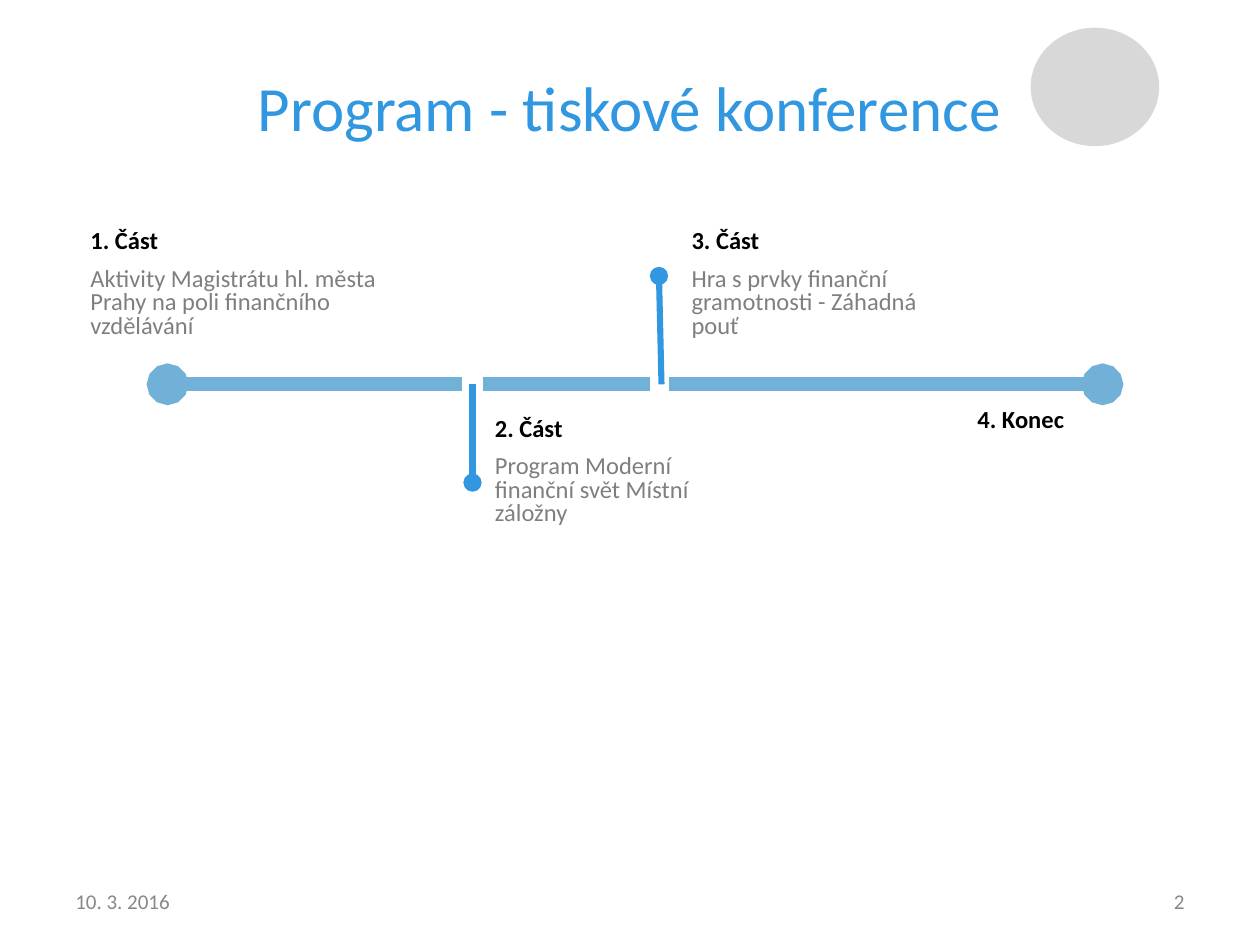
"""Build the press conference programme slide with a four-part timeline."""
from lxml import etree
from pptx import Presentation
from pptx import util as u
from pptx.dml.color import RGBColor
from pptx.enum import shapes, text
from pptx.oxml.ns import qn

HUES = {"blue": "3197E0", "sky": "72B1D7", "black": "000000",
        "gray": "7F7F7F", "pale": "888888", "disc": "D8D8D8"}
FONT = "Calibri"
WIDE, HIGH = 10, 7.5
AXIS = 3.05
TITLE = "Program - tiskové konference"
PARTS = [
    ("1. Část", "Aktivity Magistrátu hl. města Prahy na poli finančního vzdělávání",
     (0.62, 1.78, 2.5)),
    ("2. Část", "Program Moderní finanční svět Místní záložny", (3.83, 3.27, 1.84)),
    ("3. Část", "Hra s prvky finanční gramotnosti - Záhadná pouť", (5.39, 1.78, 2.19)),
    ("4. Konec", "", (7.66, 3.2, 1.94)),
]
BARS = [(1.33, 3.67, True), (8.75, 6.56, True), (3.83, 5.16, False), (5.31, 6.64, False)]
STEMS = [(3.75, 3.83, 3.75), (5.23, 2.19, 5.25)]
FOOT = [("10. 3. 2016", 0.5, text.PP_ALIGN.LEFT), ("2", 7.17, text.PP_ALIGN.RIGHT)]


def place(shape, *box):
    shape.left, shape.top, shape.width, shape.height = map(u.Inches, box)


def write(para, words, size, hue, bold=False):
    run = para.add_run()
    run.text = words
    run.font.name, run.font.size, run.font.bold = FONT, u.Pt(size), bold
    run.font.color.rgb = RGBColor.from_string(HUES[hue])


def frame(slide, *box):
    body = slide.shapes.add_textbox(*map(u.Inches, box)).text_frame
    body.word_wrap = True
    return body


def rule(slide, start, end, hue, width, dot):
    line = slide.shapes.add_connector(
        shapes.MSO_CONNECTOR.STRAIGHT, *map(u.Inches, start + end))
    line.line.color.rgb = RGBColor.from_string(HUES[hue])
    line.line.width = u.Pt(width)
    if dot:
        etree.SubElement(line.line._get_or_add_ln(), qn("a:headEnd"), type="oval")
    etree.SubElement(line._element.spPr, qn("a:effectLst"))


def main():
    deck = Presentation()
    deck.slide_width, deck.slide_height = u.Inches(WIDE), u.Inches(HIGH)
    slide = deck.slides.add_slide(deck.slide_layouts[5])

    for words, left, align in FOOT:
        body = frame(slide, left, 6.95, 2.33, 0.4)
        body.vertical_anchor = text.MSO_ANCHOR.MIDDLE
        body.paragraphs[0].alignment = align
        write(body.paragraphs[0], words, 12, "pale")

    for start, end, dot in BARS:
        rule(slide, (start, AXIS), (end, AXIS), "sky", 8, dot)
    for left, top, foot in STEMS:
        rule(slide, (left, top), (foot, AXIS), "blue", 3.5, True)

    for name, topic, box in PARTS:
        body = frame(slide, *box, 1.11)
        head = body.paragraphs[0]
        head.line_spacing = 0.8
        write(head, name, 14, "black", True)
        if topic:
            para = body.add_paragraph()
            para.line_spacing, para.space_before = 0.8, u.Pt(8.2)
            write(para, topic, 14, "gray")

    title = slide.shapes.title
    place(title, 1.05, 0.23, 7.89, 0.92)
    body = title.text_frame
    body.auto_size = text.MSO_AUTO_SIZE.NONE
    body.vertical_anchor = text.MSO_ANCHOR.MIDDLE
    para = body.paragraphs[0]
    para.alignment, para.line_spacing = text.PP_ALIGN.CENTER, 1.5
    write(para, TITLE, 36, "blue")

    disc = slide.shapes.add_shape(
        shapes.MSO_SHAPE.OVAL, *map(u.Inches, (8.18, 0.22, 1.02, 0.94)))
    disc.shadow.inherit = False
    disc.fill.solid()
    disc.fill.fore_color.rgb = RGBColor.from_string(HUES["disc"])
    disc.line.fill.background()

    deck.save("out.pptx")


if __name__ == "__main__":
    main()
